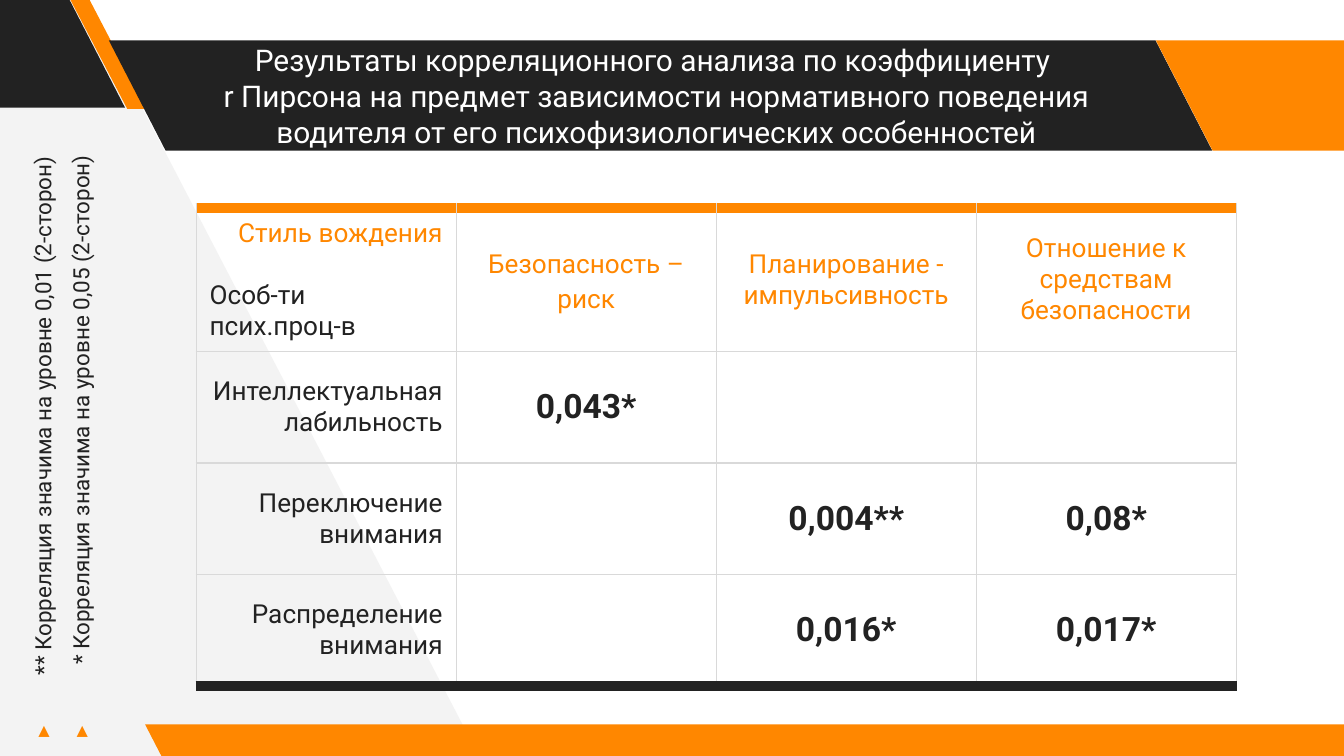
from dataclasses import dataclass
from typing import Any, NamedTuple

from lxml.etree import SubElement
from pptx import Presentation
from pptx.dml.color import RGBColor
from pptx.enum.shapes import MSO_SHAPE
from pptx.enum.text import MSO_ANCHOR, MSO_AUTO_SIZE, PP_ALIGN
from pptx.oxml.ns import qn
from pptx.util import Inches, Pt


@dataclass(frozen=True)
class Theme:
    """Colours, font and type sizes of the slide."""
    dark: str = "222222"
    orange: str = "FF8700"
    pale: str = "F3F3F3"
    grid: str = "D9D9D9"
    white: str = "FFFFFF"
    font: str = "Roboto"
    title: int = 16
    label: int = 14
    value: int = 18
    note: int = 12


class Box(NamedTuple):
    """Place and size in inches."""
    left: float
    top: float
    width: float
    height: float


class Band(NamedTuple):
    """Slanted band behind the content."""
    box: Box
    slant: float
    color: str


class Note(NamedTuple):
    """Bulleted note with its text margin in inches."""
    text: str
    margin: float


THEME = Theme()
BANDS = [
    Band(Box(-0.99, -0.02, 1.92, 0.82), 0.515, THEME.dark),
    Band(Box(0.52, -0.01, 0.57, 0.82), 0.75, THEME.orange),
    Band(Box(0.81, 0.3, 8.21, 0.82), 0.515, THEME.dark),
    Band(Box(8.6, 0.3, 1.92, 0.82), 0.515, THEME.orange),
    Band(Box(1.08, 5.39, 9.15, 0.25), 0.515, THEME.orange),
]
TITLE = ("Результаты корреляционного анализа по коэффициенту \v"
         "r Пирсона на предмет зависимости нормативного поведения "
         "водителя от его психофизиологических особенностей")
HEADS = ["Стиль вождения", "Безопасность – риск",
         "Планирование - импульсивность", "Отношение к средствам безопасности"]
CORNER = "Особ-ти псих.проц-в"
ROWS = [
    ["Интеллектуальная лабильность", "0,043*", "", ""],
    ["Переключение внимания", "", "0,004**", "0,08*"],
    ["Распределение внимания", "", "0,016*", "0,017*"],
]
NOTES = [
    Note("** Корреляция значима на уровне 0,01 (2-сторон)", 0.5),
    Note("* Корреляция значима на уровне 0,05 (2-сторон)", 0.58),
]


def format_all(item: Any, values: dict[str, Any]) -> None:
    """Set each named attribute of the item."""
    for name, value in values.items():
        setattr(item, name, value)


def place(shape: Any, box: Box) -> None:
    """Move a shape into its box."""
    format_all(shape, {key: Inches(val) for key, val in box._asdict().items()})


def paint(shape: Any, color: str) -> None:
    """Fill a shape flat, with no line or shadow."""
    shape.shadow.inherit = False
    shape.fill.solid()
    shape.fill.fore_color.rgb = RGBColor.from_string(color)
    shape.line.fill.background()


def style(para: Any, size: int, color: str, align: Any, bold: bool = False) -> None:
    """Format the text of one paragraph."""
    para.alignment = align
    for run in para.runs:
        format_all(run.font, {"name": THEME.font, "size": Pt(size), "bold": bold})
        run.font.color.rgb = RGBColor.from_string(color)


def draw_back(slide: Any) -> None:
    """Draw the pale side panel and the slanted bands."""
    form = slide.shapes.build_freeform(Inches(3.56), Inches(5.62), scale=1.0)
    points = [(0.62, -0.04), (-0.06, -0.04), (-0.02, 5.66)]
    form.add_line_segments([(Inches(x), Inches(y)) for x, y in points], close=True)
    paint(form.convert_to_shape(), THEME.pale)
    for band in BANDS:
        shape = slide.shapes.add_shape(
            MSO_SHAPE.PARALLELOGRAM, *[Inches(val) for val in band.box])
        shape.adjustments[0] = band.slant
        shape._element.spPr.find(qn("a:xfrm")).set("flipH", "1")
        paint(shape, band.color)


def fill_frame(slide: Any, holder: Any, box: Box, anchor: Any) -> Any:
    """Raise a placeholder to the front and prepare its text frame."""
    slide.shapes._spTree.append(holder._element)
    place(holder, box)
    frame = holder.text_frame
    sides = ("left", "top", "right", "bottom")
    format_all(frame, {f"margin_{side}": Inches(0.1) for side in sides})
    format_all(frame, {"word_wrap": True, "auto_size": MSO_AUTO_SIZE.NONE,
                       "vertical_anchor": anchor})
    return frame


def draw_title(slide: Any) -> None:
    """Write the slide title."""
    frame = fill_frame(slide, slide.shapes.title, Box(1.21, 0.3, 7.35, 0.82),
                       MSO_ANCHOR.MIDDLE)
    frame.text = TITLE
    style(frame.paragraphs[0], THEME.title, THEME.white, PP_ALIGN.CENTER)


def add_edge(cell: Any, side: str, color: str, width: float) -> None:
    """Add one border to a cell."""
    props = cell._tc.get_or_add_tcPr()
    line = SubElement(props, qn(f"a:ln{side}"), w=str(Pt(width)))
    SubElement(SubElement(line, qn("a:solidFill")), qn("a:srgbClr"), val=color)


def draw_table(slide: Any) -> None:
    """Draw the table of correlations."""
    data = [HEADS, *ROWS]
    last = len(data) - 1
    box = Box(1.46, 1.55, 7.74, 3.43)
    table = slide.shapes.add_table(
        len(data), len(HEADS), *[Inches(val) for val in box]).table
    format_all(table, {"first_row": False, "horz_banding": False})
    for row, texts in enumerate(data):
        table.rows[row].height = Inches(0.83 if row else 0.94)
        for col, text in enumerate(texts):
            cell = table.cell(row, col)
            format_all(cell, {
                "margin_left": Inches(0.1), "margin_right": Inches(0.1),
                "margin_top": Inches(0.07), "margin_bottom": Inches(0.07),
                "vertical_anchor": MSO_ANCHOR.MIDDLE if row or col else MSO_ANCHOR.TOP})
            thin = (THEME.grid, 0.75)
            add_edge(cell, "L", *thin)
            add_edge(cell, "R", *thin)
            add_edge(cell, "T", *(thin if row else (THEME.orange, 6)))
            add_edge(cell, "B", *(thin if row < last else (THEME.dark, 6)))
            cell.fill.background()
            cell.text = text
            value = bool(row and col)
            style(cell.text_frame.paragraphs[0],
                  THEME.value if value else THEME.label,
                  THEME.dark if row else THEME.orange,
                  PP_ALIGN.CENTER if col else PP_ALIGN.RIGHT, value)
    table.cell(0, 1).text_frame.paragraphs[0].line_spacing = 1.15
    para = table.cell(0, 0).text_frame.add_paragraph()
    format_all(para, {"text": CORNER, "space_before": Pt(17)})
    style(para, THEME.label, THEME.dark, PP_ALIGN.LEFT)


def draw_notes(slide: Any) -> None:
    """Write the upright notes on significance."""
    holder = slide.placeholders[1]
    frame = fill_frame(slide, holder, Box(-1.84, 2.88, 4.7, 0.79), MSO_ANCHOR.TOP)
    holder.rotation = 270
    frame.text = "\n".join(note.text for note in NOTES)
    for para, note in zip(frame.paragraphs, NOTES):
        style(para, THEME.note, THEME.dark, PP_ALIGN.LEFT)
        para.space_before = Pt(6)
        props = para._p.get_or_add_pPr()
        props.set("marL", str(Inches(note.margin)))
        props.set("indent", str(Inches(0.04 - note.margin)))
        tint = SubElement(props, qn("a:buClr"))
        SubElement(tint, qn("a:srgbClr"), val=THEME.orange)
        SubElement(props, qn("a:buFont"), typeface=THEME.font)
        SubElement(props, qn("a:buChar"), char="▸")


def main() -> None:
    """Build and save the slide."""
    deck = Presentation()
    wide = Inches(10)
    format_all(deck, {"slide_width": wide, "slide_height": wide * 9 // 16})
    slide = deck.slides.add_slide(deck.slide_layouts[1])
    draw_back(slide)
    draw_title(slide)
    draw_table(slide)
    draw_notes(slide)
    deck.save("out.pptx")


if __name__ == "__main__":
    main()
